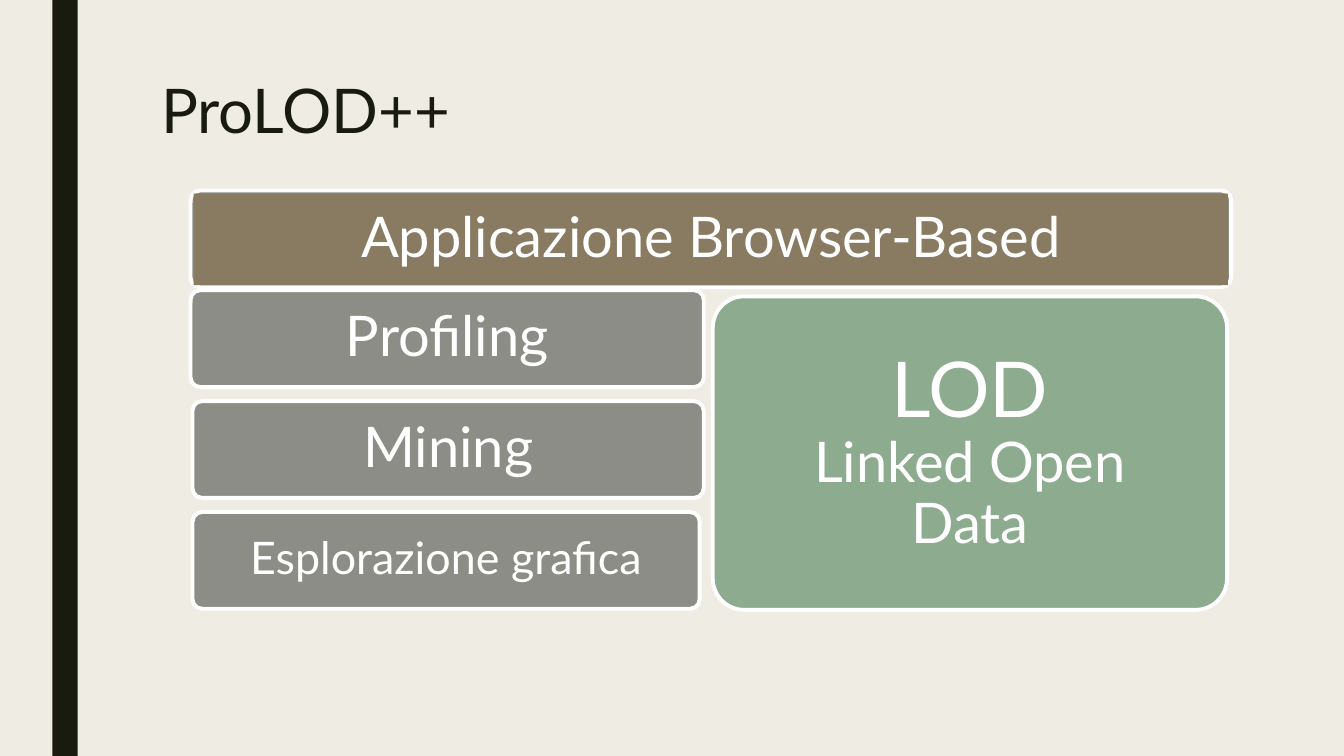
import pptx
import pptx.util
import pptx.dml.color
import pptx.enum.shapes
import pptx.enum.text
from dataclasses import dataclass

Inches = pptx.util.Inches
Pt = pptx.util.Pt
Shape = pptx.enum.shapes.MSO_SHAPE
Anchor = pptx.enum.text.MSO_ANCHOR
Align = pptx.enum.text.PP_ALIGN


@dataclass(frozen=True)
class Theme:
    font: str = "Lato"
    paper: str = "EFEDE3"
    ink: str = "191B0E"
    white: str = "FFFFFF"
    gray: str = "8C8D86"
    brown: str = "897B61"
    green: str = "8DAB8E"
    title: int = 44
    huge: int = 55
    large: int = 40
    small: int = 32
    edge: float = 2.75


THEME = Theme()


def color(code):
    return pptx.dml.color.RGBColor.from_string(code)


def style(font, size, code):
    font.name = THEME.font
    font.size = Pt(size)
    font.color.rgb = color(code)


def add_block(slide, kind, box, fill, edge=False):
    shape = slide.shapes.add_shape(kind, *map(Inches, box))
    shape.shadow.inherit = False
    shape.fill.solid()
    shape.fill.fore_color.rgb = color(fill)
    if edge:
        shape.line.color.rgb = color(THEME.white)
        shape.line.width = Pt(THEME.edge)
    else:
        shape.line.fill.background()
    return shape


def add_card(slide, box, fill):
    card = add_block(slide, Shape.ROUNDED_RECTANGLE, box, fill, edge=True)
    card.adjustments[0] = 0.1
    return card


def set_label(shape, lines, side=0.17):
    """Centre (text, size) lines in one paragraph, split by line breaks."""
    frame = shape.text_frame
    frame.word_wrap = True
    frame.vertical_anchor = Anchor.MIDDLE
    frame.margin_left = frame.margin_right = Inches(side)
    para = frame.paragraphs[0]
    para.alignment = Align.CENTER
    para.line_spacing = 0.9
    for index, (text, size) in enumerate(lines):
        if index:
            para.add_line_break()
        run = para.add_run()
        run.text = text
        style(run.font, size, THEME.white)


def add_title(slide, text):
    box = slide.shapes.add_textbox(
        Inches(1.5), Inches(0.75), Inches(10.5), Inches(0.95))
    box.text_frame.word_wrap = True
    para = box.text_frame.paragraphs[0]
    para.text = text
    para.line_spacing = 0.89
    style(para.font, THEME.title, THEME.ink)


def main():
    deck = pptx.Presentation()
    deck.slide_width, deck.slide_height = Inches(13.33), Inches(7.5)
    slide = deck.slides.add_slide(deck.slide_layouts[6])
    slide.background.fill.solid()
    slide.background.fill.fore_color.rgb = color(THEME.paper)

    add_block(slide, Shape.RECTANGLE, (0.52, 0, 0.25, 7.5), THEME.ink)
    add_title(slide, "ProLOD++")

    add_card(slide, (1.89, 1.89, 10.32, 0.96), THEME.gray)
    head = add_block(
        slide, Shape.RECTANGLE, (1.92, 1.92, 10.26, 0.91), THEME.brown)
    set_label(head, [("Applicazione Browser-Based", THEME.large)])

    top, step = 2.88, 1.1
    tasks = [
        ("Profiling", THEME.large, 1.89, 5.09),
        ("Mining", THEME.large, 1.91, 5.07),
        ("Esplorazione grafica", THEME.small, 1.91, 5.03),
    ]
    for row, (text, size, left, width) in enumerate(tasks):
        card = add_card(
            slide, (left, top + row * step, width, 0.96), THEME.gray)
        set_label(card, [(text, size)])

    data = add_card(slide, (7.07, 2.94, 5.1, 3.11), THEME.green)
    set_label(data, [("LOD", THEME.huge),
                     ("Linked Open Data", THEME.large)], side=0.36)

    deck.save("out.pptx")


if __name__ == "__main__":
    main()
